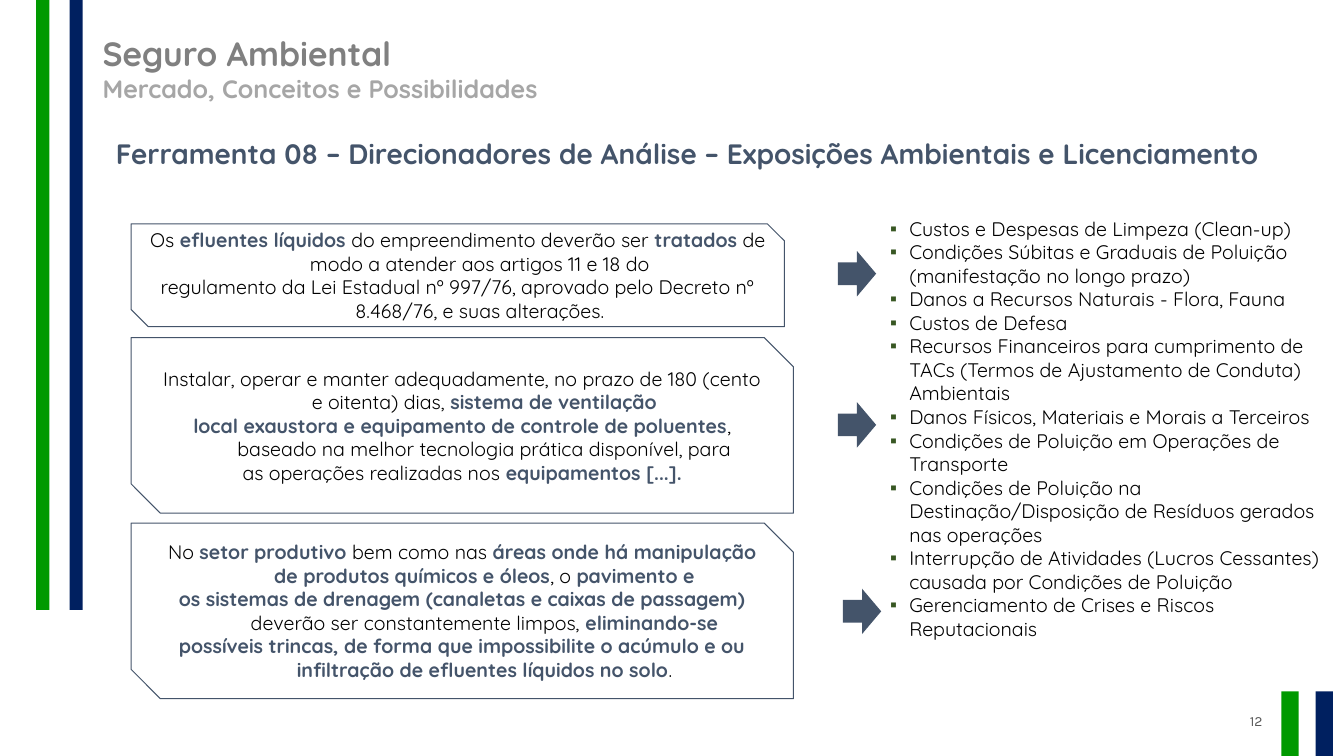
from lxml.etree import SubElement
from pptx import Presentation
from pptx.dml.color import RGBColor
from pptx.enum.shapes import MSO_SHAPE
from pptx.enum.text import MSO_ANCHOR, PP_ALIGN
from pptx.oxml.ns import qn
from pptx.util import Inches, Pt

GREEN = RGBColor(0x00, 0x99, 0x00)
NAVY = RGBColor(0x00, 0x20, 0x60)
SLATE = RGBColor(0x44, 0x54, 0x6A)
GRAY = RGBColor(0x80, 0x80, 0x80)
SILVER = RGBColor(0xA6, 0xA6, 0xA6)
DARK = RGBColor(0x59, 0x59, 0x59)
BLACK = RGBColor(0x00, 0x00, 0x00)
BULLET = "385723"
FONT = "Quicksand"

# Asterisks enclose the bold parts
CARDS = [
    (2.22, 6.48, 1.02, [
        "Os *efluentes líquidos *do empreendimento deverão ser *tratados* de modo "
        "a atender aos artigos 11 e 18 do",
        "regulamento da Lei Estadual nº 997/76, aprovado pelo Decreto nº 8.468/76, "
        "e suas alterações.",
    ]),
    (3.35, 6.57, 1.74, [
        "Instalar, operar e manter adequadamente, no prazo de 180 (cento e oitenta) "
        "dias, *sistema de ventilação*",
        "*local exaustora e equipamento de controle de poluentes*, baseado na melhor "
        "tecnologia prática disponível, para",
        "as operações realizadas nos *equipamentos [...].*",
    ]),
    (5.19, 6.57, 1.74, [
        "No *setor produtivo *bem como nas *áreas onde há manipulação de produtos "
        "químicos e óleos*, o *pavimento e*",
        "*os sistemas de drenagem (canaletas e caixas de passagem) *deverão ser "
        "constantemente limpos, *eliminando-se*",
        "*possíveis trincas, de forma que impossibilite o acúmulo e ou infiltração "
        "de efluentes líquidos no solo*.",
    ]),
]
ARROWS = [(8.31, 2.49), (8.31, 3.99), (8.36, 5.84)]
COVERS = [
    "Custos e Despesas de Limpeza (Clean-up)",
    "Condições Súbitas e Graduais de Poluição (manifestação no longo prazo)",
    "Danos a Recursos Naturais - Flora, Fauna",
    "Custos de Defesa",
    "Recursos Financeiros para cumprimento de TACs (Termos de Ajustamento de "
    "Conduta) Ambientais",
    "Danos Físicos, Materiais e Morais a Terceiros",
    "Condições de Poluição em Operações de Transporte",
    "Condições de Poluição na Destinação/Disposição de Resíduos gerados nas operações",
    "Interrupção de Atividades (Lucros Cessantes) causada por Condições de Poluição",
    "Gerenciamento de Crises e Riscos Reputacionais",
]


def style(font, size, color, bold=False, name=FONT):
    font.name, font.size, font.bold = name, Pt(size), bold
    font.color.rgb = color


def hang(para, depth):
    props = para._p.get_or_add_pPr()
    props.set("marL", str(Inches(depth)))
    props.set("indent", str(-Inches(depth)))
    return props


def add_shape(slide, kind, x, y, w, h, fill=None):
    shape = slide.shapes.add_shape(kind, Inches(x), Inches(y), Inches(w), Inches(h))
    shape.shadow.inherit = False
    if fill is None:
        shape.fill.background()
    else:
        shape.fill.solid()
        shape.fill.fore_color.rgb = fill
        shape.line.fill.background()
    return shape


def add_text(slide, x, y, w, h, lines):
    box = slide.shapes.add_textbox(Inches(x), Inches(y), Inches(w), Inches(h))
    frame = box.text_frame
    frame.word_wrap = True
    frame.text = "\n".join(lines)
    return frame


def add_bars(slide, x, y, w, h, step):
    for i, color in enumerate((GREEN, NAVY)):
        add_shape(slide, MSO_SHAPE.RECTANGLE, x + i * step, y, w, h, color)


def add_head(slide, x, y, w):
    frame = add_text(slide, x, y, w, 0.81,
                     ["Seguro Ambiental", "Mercado, Conceitos e Possibilidades"])
    top, sub = frame.paragraphs
    style(top.font, 24, GRAY, True)
    style(sub.font, 18, SILVER, True)
    frame = add_text(slide, x + 0.13, y + 1.03, 11.92, 0.44, [
        "Ferramenta 08 – Direcionadores de Análise – Exposições Ambientais "
        "e Licenciamento"])
    style(frame.paragraphs[0].font, 20, SLATE, True)


def add_card(slide, x, y, w, h, lines):
    card = add_shape(slide, MSO_SHAPE.SNIP_2_DIAG_RECTANGLE, x, y, w, h)
    card.line.color.rgb = SLATE
    card.line.width = Pt(0.75)
    frame = card.text_frame
    frame.word_wrap = True
    frame.vertical_anchor = MSO_ANCHOR.MIDDLE
    for i, line in enumerate(lines):
        para = frame.add_paragraph() if i else frame.paragraphs[0]
        para.alignment = PP_ALIGN.CENTER
        hang(para, 0.44)
        for j, part in enumerate(line.split("*")):
            if part:
                run = para.add_run()
                run.text = part
                bold = j % 2 == 1
                style(run.font, 14, SLATE if bold else BLACK, bold)


def add_list(slide, x, y, w, h, lines):
    for para in add_text(slide, x, y, w, h, lines).paragraphs:
        props = hang(para, 0.19)
        tint = SubElement(props, qn("a:buClr"))
        SubElement(tint, qn("a:srgbClr"), val=BULLET)
        SubElement(props, qn("a:buFont"), typeface="Arial")
        SubElement(props, qn("a:buChar"), char="▪")
        style(para.font, 14, BLACK)


def add_page(slide, x, y, w, h):
    frame = add_text(slide, x, y, w, h, ["12"])
    frame.vertical_anchor = MSO_ANCHOR.MIDDLE
    para = frame.paragraphs[0]
    para.alignment = PP_ALIGN.RIGHT
    style(para.font, 10, DARK, name="Karla")


def main():
    deck = Presentation()
    deck.slide_width, deck.slide_height = Inches(13.33), Inches(7.5)
    slide = deck.slides.add_slide(deck.slide_layouts[6])

    # Side and corner bars, page number
    add_bars(slide, 0.36, 0, 0.13, 6.05, 0.33)
    add_bars(slide, 12.71, 6.86, 0.17, 0.64, 0.34)
    add_page(slide, 9.62, 6.95, 3, 0.4)

    # Titles
    add_head(slide, 0.92, 0.28, 9.79)

    # Licence terms, arrows and covers
    for y, w, h, lines in CARDS:
        add_card(slide, 1.3, y, w, h, lines)
    for x, y in ARROWS:
        add_shape(slide, MSO_SHAPE.RIGHT_ARROW, x, y, 0.38, 0.45, SLATE)
    add_list(slide, 8.73, 2.1, 4.46, 4.81, COVERS)

    deck.save("out.pptx")


if __name__ == "__main__":
    main()
